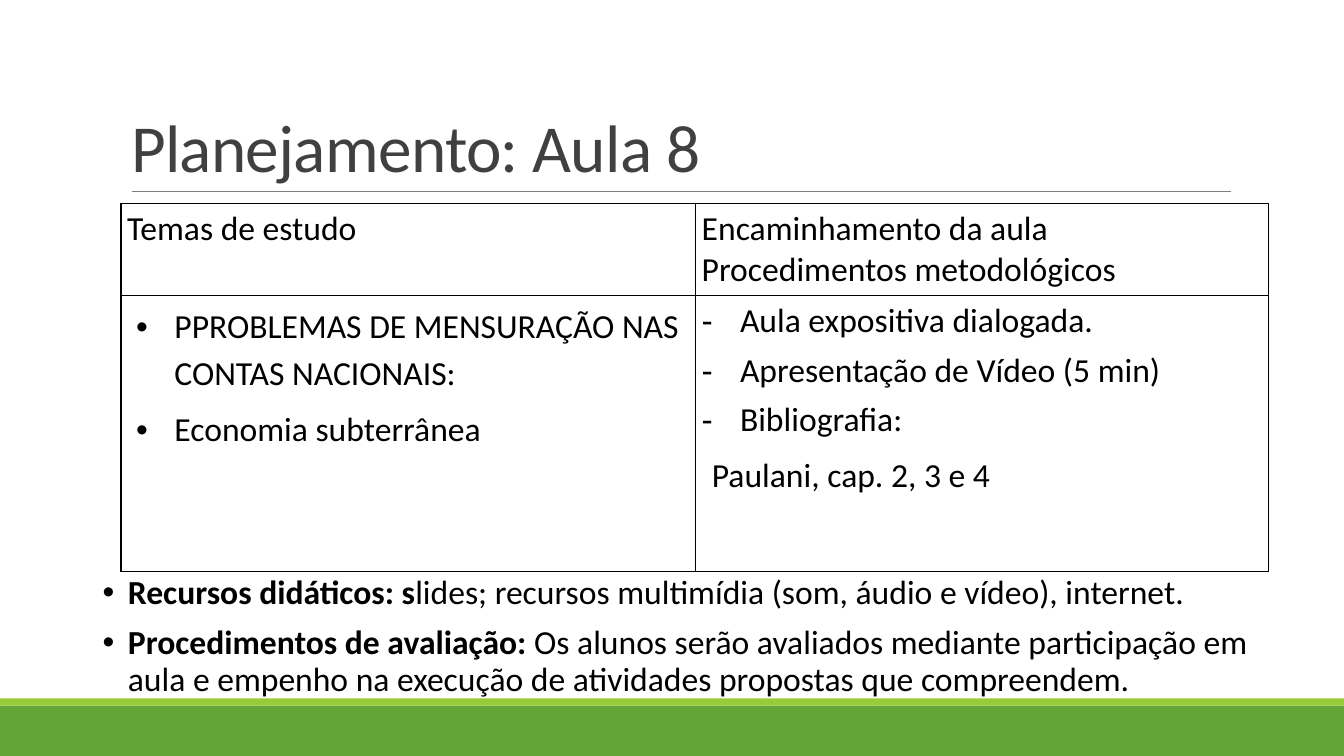
import pptx
import pptx.util
import pptx.dml.color
import pptx.enum.shapes
import pptx.enum.text
import lxml.etree

Inches, Pt = pptx.util.Inches, pptx.util.Pt

# Content: table cells hold (text, style) lines
TITLE = "Planejamento: Aula 8"
ROWS = [
    [
        [("Temas de estudo", "plain")],
        [("Encaminhamento da aula", "plain"),
         ("Procedimentos metodológicos", "plain")],
    ],
    [
        [("PPROBLEMAS DE MENSURAÇÃO NAS CONTAS NACIONAIS:", "topic"),
         ("Economia subterrânea", "topic")],
        [("Aula expositiva dialogada.", "dash"),
         ("Apresentação de Vídeo (5 min)", "dash"),
         ("Bibliografia:", "dash"),
         ("Paulani, cap. 2, 3 e 4", "cite")],
    ],
]
NOTES = [
    ("Recursos didáticos: s",
     "lides; recursos multimídia (som, áudio e vídeo), internet."),
    ("Procedimentos de avaliação: ",
     "Os alunos serão avaliados mediante participação em aula e empenho "
     "na execução de atividades propostas que compreendem."),
]

# Style: bullet, left margin, indent, line spacing, space after
STYLES = {
    "plain": (None, 0, 0, 1, 0),
    "topic": ("•", 0.47, -0.38, 1.15, 6),
    "dash": ("-", 0.38, -0.38, 1, 6),
    "cite": (None, 0.1, 0, 1.15, 6),
    "note": ("•", 0.25, -0.25, 0.9, 0),
}
THEME = {
    "font": "Calibri", "head": 48, "body": 24,
    "ink": "000000", "title": "404040", "rule": "808080",
    "band": "63A537", "strip": "99CB38",
}
COLS, HIGHS = (5.7, 5.68), (0.91, 2.74)
NS = "http://schemas.openxmlformats.org/drawingml/2006/main"


def color(name):
    return pptx.dml.color.RGBColor.from_string(THEME[name])


def add_tag(node, tag, **attrs):
    return lxml.etree.SubElement(node, f"{{{NS}}}{tag}", **attrs)


def set_font(para, size, ink):
    para.font.name = THEME["font"]
    para.font.size = Pt(THEME[size])
    para.font.color.rgb = color(ink)


def set_style(para, name):
    mark, left, indent, lead, after = STYLES[name]
    props = para._p.get_or_add_pPr()
    props.set("marL", str(Inches(left)))
    props.set("indent", str(Inches(indent)))
    if mark:
        add_tag(props, "buFont", typeface="Arial")
        add_tag(props, "buChar", char=mark)
    else:
        add_tag(props, "buNone")
    para.line_spacing = lead
    para.space_after = Pt(after)
    set_font(para, "body", "ink")


def get_para(frame, index):
    return frame.add_paragraph() if index else frame.paragraphs[0]


def add_bar(slide, top, height, fill):
    bar = slide.shapes.add_shape(
        pptx.enum.shapes.MSO_SHAPE.RECTANGLE,
        0, Inches(top), Inches(13.33), Inches(height))
    bar.shadow.inherit = False
    bar.fill.solid()
    bar.fill.fore_color.rgb = color(fill)
    bar.line.fill.background()


def set_cell(cell, lines):
    cell.fill.background()
    cell.margin_left = cell.margin_right = Inches(0.06)
    cell.margin_top = cell.margin_bottom = Inches(0.05)
    for index, (text, style) in enumerate(lines):
        para = get_para(cell.text_frame, index)
        para.text = text
        set_style(para, style)
    # Borders come before the fill in the cell properties
    props = cell._tc.get_or_add_tcPr()
    for place, side in enumerate(("lnL", "lnR", "lnT", "lnB")):
        line = add_tag(props, side, w=str(Pt(1)))
        fill = add_tag(line, "solidFill")
        add_tag(fill, "srgbClr", val=THEME["ink"])
        props.insert(place, line)


def main():
    deck = pptx.Presentation()
    deck.slide_width, deck.slide_height = Inches(13.33), Inches(7.5)
    slide = deck.slides.add_slide(deck.slide_layouts[5])

    # Bottom bands and title rule
    add_bar(slide, 7, 0.5, "band")
    add_bar(slide, 6.93, 0.07, "strip")
    rule = slide.shapes.add_connector(
        pptx.enum.shapes.MSO_CONNECTOR.STRAIGHT,
        Inches(1.31), Inches(1.9), Inches(12.21), Inches(1.9))
    rule.line.color.rgb = color("rule")
    rule.line.width = Pt(0.5)
    add_tag(rule._element.spPr, "effectLst")

    # Title
    title = slide.shapes.title
    title.left, title.top = Inches(1.2), Inches(0.31)
    title.width, title.height = Inches(11), Inches(1.59)
    frame = title.text_frame
    frame.text = TITLE
    frame.word_wrap = True
    frame.vertical_anchor = pptx.enum.text.MSO_ANCHOR.BOTTOM
    para = frame.paragraphs[0]
    para.alignment = pptx.enum.text.PP_ALIGN.LEFT
    para.line_spacing = 0.85
    set_font(para, "head", "title")
    para.runs[0]._r.get_or_add_rPr().set("spc", "-50")

    # Lesson table
    table = slide.shapes.add_table(
        len(HIGHS), len(COLS), Inches(1.2), Inches(2.02),
        Inches(sum(COLS)), Inches(sum(HIGHS))).table
    table.first_row = table.horz_banding = False
    for col, width in zip(table.columns, COLS):
        col.width = Inches(width)
    for row, height, cells in zip(table.rows, HIGHS, ROWS):
        row.height = Inches(height)
        for cell, lines in zip(row.cells, cells):
            set_cell(cell, lines)

    # Resources and grading
    box = slide.shapes.add_textbox(
        Inches(0.92), Inches(5.66), Inches(11.92), Inches(1.84))
    box.text_frame.word_wrap = True
    for index, (label, text) in enumerate(NOTES):
        para = get_para(box.text_frame, index)
        set_style(para, "note")
        if index:
            para.space_before = Pt(10)
        for part, bold in ((label, True), (text, False)):
            run = para.add_run()
            run.text = part
            run.font.bold = bold

    deck.save("out.pptx")


if __name__ == "__main__":
    main()
